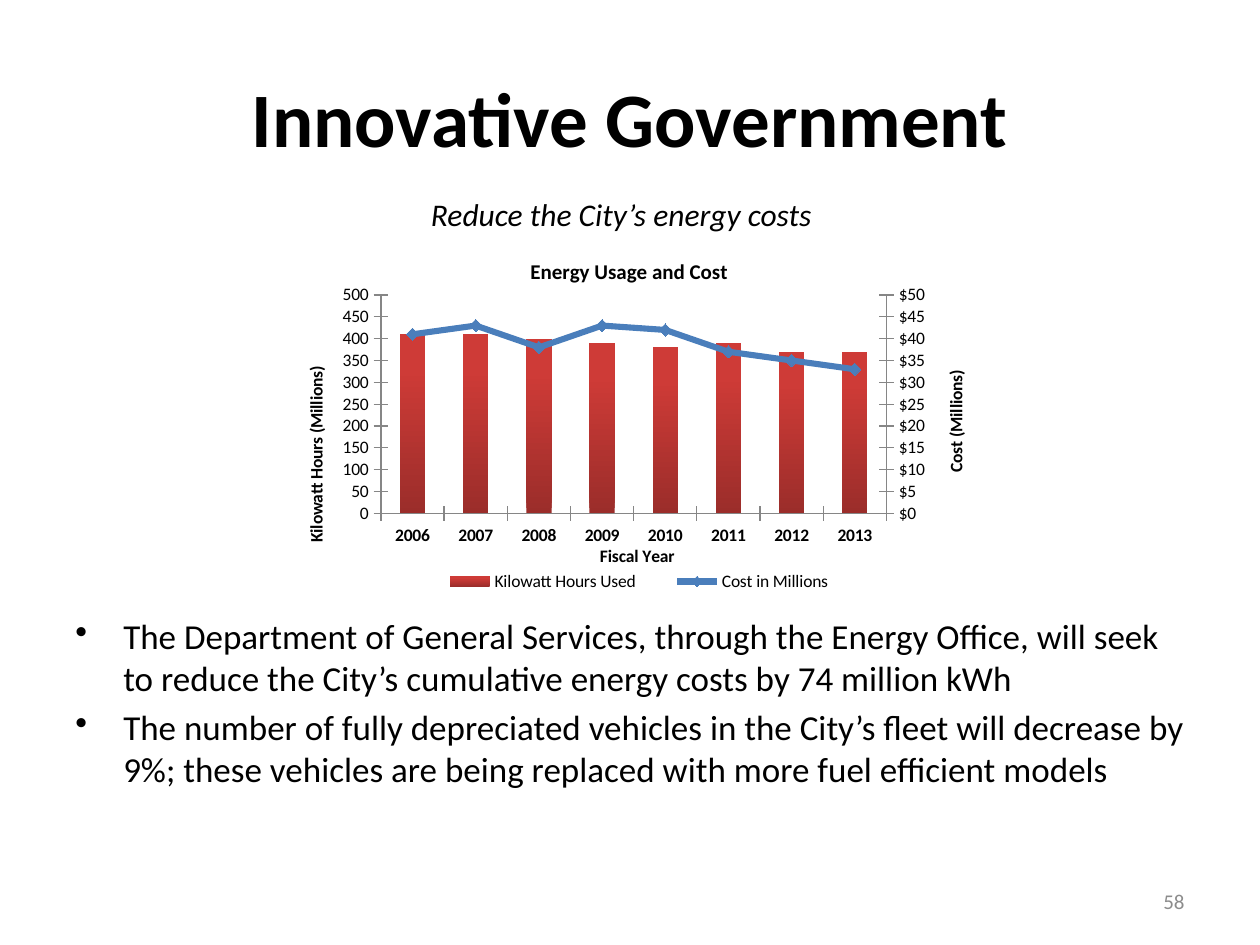
import copy
import lxml.etree
import pptx
import pptx.chart.axis
import pptx.chart.data
import pptx.dml.color
import pptx.enum.chart
import pptx.enum.text
import pptx.oxml
import pptx.oxml.ns
import pptx.util

qn = pptx.oxml.ns.qn
rgb = pptx.dml.color.RGBColor.from_string
Align = pptx.enum.text.PP_ALIGN
Anchor = pptx.enum.text.MSO_ANCHOR

THEME = {
    "font": "Calibri", "text": rgb("000000"), "muted": rgb("8C8C8C"),
    "axis": rgb("868686"), "bar_bottom": rgb("9B2D2A"),
    "bar_top": rgb("CE3B37"), "line": rgb("4A7EBB"),
    "title": 44, "subtitle": 18, "body": 20, "number": 12,
    "chart": 10, "chart_title": 12,
}

presentation = pptx.Presentation()
presentation.slide_width = pptx.util.Inches(10)
presentation.slide_height = pptx.util.Inches(7.5)
slide = presentation.slides.add_slide(presentation.slide_layouts[6])

# Grid: 100 columns by 100 rows
column = presentation.slide_width / 100
row = presentation.slide_height / 100


def add_text(left, top, width, height, lines, size, align, anchor=Anchor.TOP,
             color="text", bold=False, italic=False, bullets=False):
    box = slide.shapes.add_textbox(int(left * column), int(top * row),
                                   int(width * column), int(height * row))
    frame = box.text_frame
    frame.word_wrap = True
    frame.vertical_anchor = anchor
    frame.text = "\n".join(lines)
    for index, paragraph in enumerate(frame.paragraphs):
        paragraph.alignment = align
        if bullets:
            properties = paragraph._p.get_or_add_pPr()
            properties.set("marL", str(pptx.util.Inches(0.38)))
            properties.set("indent", str(-pptx.util.Inches(0.38)))
            bullet = lxml.etree.SubElement(properties, qn("a:buChar"))
            bullet.set("char", "•")
            if index:
                paragraph.space_before = pptx.util.Pt(size * 0.2)
        font = paragraph.font
        font.name, font.size = THEME["font"], pptx.util.Pt(size)
        font.bold, font.italic = bold, italic
        font.color.rgb = THEME[color]


def set_position(element, left, top, width=None, height=None, inner=False):
    """Place a chart part by shares of the chart's size."""
    for old in element.findall(qn("c:layout")):
        element.remove(old)
    layout = pptx.oxml.parse_xml(
        f'<c:layout {pptx.oxml.ns.nsdecls("c")}><c:manualLayout/></c:layout>')
    settings = [("layoutTarget", "inner" if inner else None),
                ("xMode", "edge"), ("yMode", "edge"),
                ("x", left), ("y", top), ("w", width), ("h", height)]
    for name, value in settings:
        if value is not None:
            lxml.etree.SubElement(layout[0], qn("c:" + name)).set("val", str(value))
    before = [child for child in element
              if child.tag in (qn("c:tx"), qn("c:legendPos"))]
    element.insert(len(before), layout)


# Heading, subtitle, bullets and slide number
add_text(5, 4, 90, 16.67, ["Innovative Government"], THEME["title"],
         Align.CENTER, Anchor.MIDDLE, bold=True)
add_text(0, 20, 99.2, 5.33, ["Reduce the City’s energy costs "],
         THEME["subtitle"], Align.CENTER, italic=True)
add_text(5, 64.4, 90.2, 28.27, [
    "The Department of General Services, through the Energy Office, will seek "
    "to reduce the City’s cumulative energy costs by 74 million kWh",
    "The number of fully depreciated vehicles in the City’s fleet will decrease "
    "by 9%; these vehicles are being replaced with more fuel efficient models",
], THEME["body"], Align.LEFT, bullets=True)
add_text(71.7, 92.67, 23.3, 5.33, ["58"], THEME["number"], Align.RIGHT,
         Anchor.MIDDLE, color="muted")

# Chart: both series start as columns
data = pptx.chart.data.CategoryChartData()
data.categories = [str(year) for year in range(2006, 2014)]
data.add_series("Kilowatt Hours Used", [410, 410, 400, 390, 380, 390, 370, 370])
data.add_series("Cost in Millions", [41, 43, 38, 43, 42, 37, 35, 33])
chart = slide.shapes.add_chart(
    pptx.enum.chart.XL_CHART_TYPE.COLUMN_CLUSTERED, int(21.7 * column),
    int(25.33 * row), int(55.8 * column), int(38.53 * row), data).chart
chart.font.name = THEME["font"]
chart.font.size = pptx.util.Pt(THEME["chart"])
chart.font.color.rgb = THEME["text"]
chart.has_title = True
chart.has_legend = True
chart.legend.position = pptx.enum.chart.XL_LEGEND_POSITION.BOTTOM
chart.legend.include_in_layout = False
set_position(chart.legend._element, 0.2, 0.89, 0.64, 0.1)

# Primary axes
years, hours = chart.category_axis, chart.value_axis
years.tick_labels.font.bold = True
hours.minimum_scale, hours.maximum_scale, hours.major_unit = 0, 500, 50
hours.has_major_gridlines = False
for axis in (years, hours):
    axis.major_tick_mark = pptx.enum.chart.XL_TICK_MARK.CROSS
    axis.format.line.color.rgb = THEME["axis"]
    axis.format.line.width = pptx.util.Pt(0.75)

# Secondary axes: a hidden category axis and a cost axis on the right
plot_area = years._element.getparent()
set_position(plot_area, 0.153, 0.153, 0.719, 0.6, inner=True)
hidden_years = copy.deepcopy(years._element)
cost_element = copy.deepcopy(hours._element)
hidden_years.find(qn("c:delete")).set("val", "1")
cost_element.find(qn("c:axPos")).set("val", "r")
cost_element.find(qn("c:crosses")).set("val", "max")
for element, own, other in ((hidden_years, "5001", "5002"),
                            (cost_element, "5002", "5001")):
    element.find(qn("c:axId")).set("val", own)
    element.find(qn("c:crossAx")).set("val", other)
hours._element.addnext(cost_element)
cost_element.addnext(hidden_years)
cost = pptx.chart.axis.ValueAxis(cost_element)
cost.maximum_scale, cost.major_unit = 50, 5
cost.tick_labels.number_format = "\\$#,##0"
cost.tick_labels.number_format_is_linked = False

# Chart and axis titles
for owner, words, size, left, top, turned in (
        (chart, "Energy Usage and Cost", THEME["chart_title"], 0.36, 0.04, False),
        (years, "Fiscal Year", THEME["chart"], 0.46, 0.83, False),
        (hours, "Kilowatt Hours (Millions)", THEME["chart"], 0.04, 0.34, True),
        (cost, "Cost (Millions)", THEME["chart"], 0.95, 0.35, True)):
    title = owner.chart_title if owner is chart else owner.axis_title
    title.text_frame.text = words
    font = title.text_frame.paragraphs[0].font
    font.name, font.size, font.bold = THEME["font"], pptx.util.Pt(size), True
    font.color.rgb = THEME["text"]
    if turned:
        body = title._element.find(".//" + qn("a:bodyPr"))
        body.set("rot", "-5400000")
        body.set("vert", "horz")
    set_position(title._element, left, top)

# Move the cost series to a line plot on the secondary axes
columns = chart.plots[0]
columns.gap_width = 150
columns.vary_by_categories = False
cost_series = columns.series[1]._element
for child in cost_series.findall(qn("c:invertIfNegative")):
    cost_series.remove(child)
line_plot = pptx.oxml.parse_xml(
    f'<c:lineChart {pptx.oxml.ns.nsdecls("c")}><c:grouping val="standard"/>'
    '<c:varyColors val="0"/><c:marker val="1"/>'
    '<c:axId val="5001"/><c:axId val="5002"/></c:lineChart>')
line_plot.insert(2, cost_series)
columns._element.addnext(line_plot)

# Series colours
bar_fill = columns.series[0].format.fill
bar_fill.gradient()
bar_fill.gradient_angle = 90
for stop, name, position in zip(bar_fill.gradient_stops,
                                ("bar_bottom", "bar_top"), (0, 0.8)):
    stop.color.rgb = THEME[name]
    stop.position = position
cost_line = chart.plots[1].series[0]
cost_line.smooth = False
cost_line.format.line.color.rgb = THEME["line"]
cost_line.format.line.width = pptx.util.Pt(3.5)
cost_line.marker.style = pptx.enum.chart.XL_MARKER_STYLE.DIAMOND
cost_line.marker.size = 7
cost_line.marker.format.fill.solid()
cost_line.marker.format.fill.fore_color.rgb = THEME["line"]
cost_line.marker.format.line.color.rgb = THEME["line"]

presentation.save("out.pptx")
